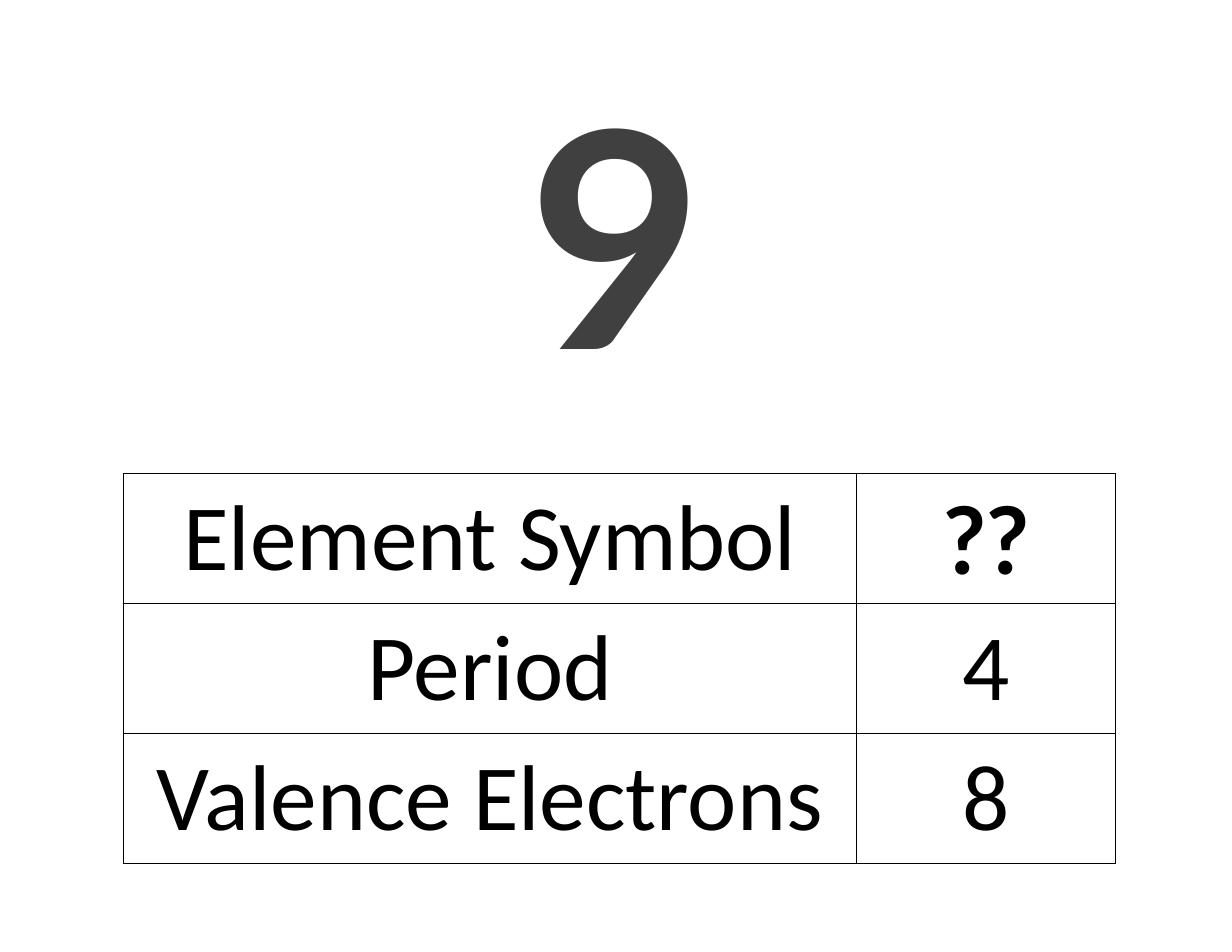
from lxml import etree
from pptx import Presentation
from pptx.dml.color import RGBColor
from pptx.enum.text import MSO_ANCHOR, PP_ALIGN
from pptx.oxml.ns import qn
from pptx.util import Inches, Pt

MIDDLE = MSO_ANCHOR.MIDDLE
CENTER = PP_ALIGN.CENTER

# Content
CARD_NUMBER = "9"
UNKNOWN = "??"
CLUES = [
    ("Element Symbol", UNKNOWN),
    ("Period", "4"),
    ("Valence Electrons", "8"),
]

THEME = {
    "paper": "FFFFFF", "ink": "000000", "number": "404040",
    "body_font": "Calibri", "accent_font": "Lato",
    "number_size": 194, "clue_size": 60, "border": 1,
}

# Layout in inches
SLIDE_W, SLIDE_H = 11, 8.5
NUMBER_TOP, NUMBER_H = 0.76, 2.98
GRID_LEFT, GRID_TOP = SLIDE_W / 10, 4.23
COLUMN_WIDTHS = (6.55, 2.31)
ROW_H = 1.16


def add_text(frame, text, size, color, accent):
    paragraph = frame.paragraphs[0]
    paragraph.alignment = CENTER
    run = paragraph.add_run()
    run.text = text
    run.font.size = Pt(size)
    run.font.bold = accent
    run.font.name = THEME["accent_font" if accent else "body_font"]
    run.font.color.rgb = RGBColor.from_string(color)
    return paragraph


def add_borders(cell):
    properties = cell._tc.get_or_add_tcPr()
    for position, side in enumerate(("lnL", "lnR", "lnT", "lnB")):
        line = etree.Element(qn(f"a:{side}"), w=str(Pt(THEME["border"])))
        fill = etree.SubElement(line, qn("a:solidFill"))
        etree.SubElement(fill, qn("a:srgbClr"), val=THEME["ink"])
        properties.insert(position, line)


def main():
    deck = Presentation()
    deck.slide_width, deck.slide_height = Inches(SLIDE_W), Inches(SLIDE_H)
    slide = deck.slides.add_slide(deck.slide_layouts[6])

    # Card number
    number = slide.shapes.add_textbox(
        0, Inches(NUMBER_TOP), deck.slide_width, Inches(NUMBER_H)).text_frame
    number.word_wrap = True
    number.vertical_anchor = MIDDLE
    add_text(number, CARD_NUMBER, THEME["number_size"], THEME["number"],
             True).line_spacing = 0.9

    # Clue table
    clues = slide.shapes.add_table(
        len(CLUES), len(COLUMN_WIDTHS), Inches(GRID_LEFT), Inches(GRID_TOP),
        Inches(sum(COLUMN_WIDTHS)), Inches(ROW_H * len(CLUES))).table
    clues.first_row = clues.horz_banding = False
    for column, width in zip(clues.columns, COLUMN_WIDTHS):
        column.width = Inches(width)
    for row, entries in enumerate(CLUES):
        clues.rows[row].height = Inches(ROW_H)
        for column, entry in enumerate(entries):
            cell = clues.cell(row, column)
            cell.vertical_anchor = MIDDLE
            cell.fill.solid()
            cell.fill.fore_color.rgb = RGBColor.from_string(THEME["paper"])
            add_borders(cell)
            add_text(cell.text_frame, entry, THEME["clue_size"], THEME["ink"],
                     entry == UNKNOWN)

    deck.save("out.pptx")


if __name__ == "__main__":
    main()
